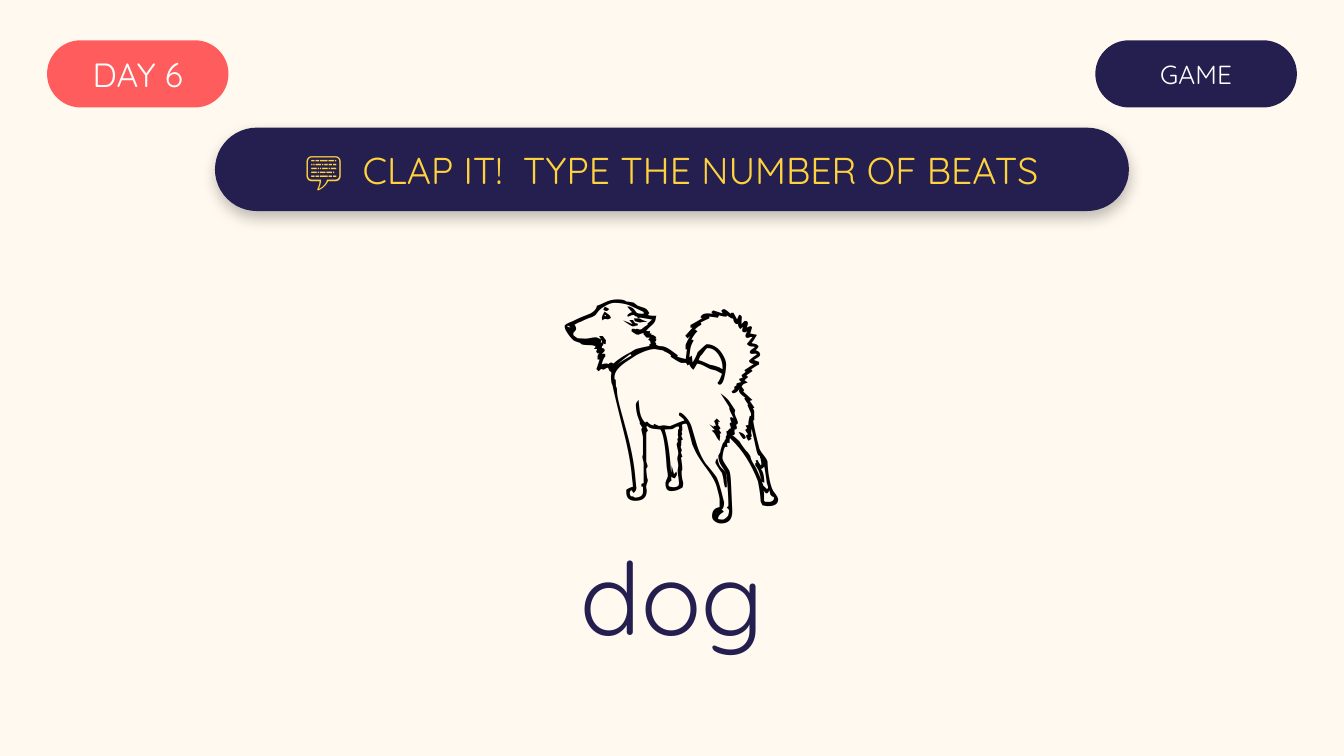
import pptx
import pptx.util
import pptx.dml.color
import pptx.enum.shapes
import pptx.enum.text
import pptx.oxml
import pptx.oxml.ns

Inches = pptx.util.Inches

COLORS = {
    "cream": "FFF9EF",
    "coral": "FF5D5D",
    "navy": "241F4E",
    "yellow": "FFD23F",
    "white": "FFFFFF",
    "black": "000000",
}
SLIDE_WIDTH = 10
SLIDE_HEIGHT = SLIDE_WIDTH * 9 / 16
MARGIN = 0.35


def rgb(color):
    return pptx.dml.color.RGBColor.from_string(COLORS[color])


def add_text(slide, left, top, width, height, text, size, color,
             font="Quicksand", anchor="MIDDLE"):
    text_box = slide.shapes.add_textbox(
        Inches(left), Inches(top), Inches(width), Inches(height)
    )
    text_frame = text_box.text_frame
    text_frame.word_wrap = True
    text_frame.vertical_anchor = getattr(pptx.enum.text.MSO_ANCHOR, anchor)
    text_frame.text = text
    paragraph = text_frame.paragraphs[0]
    paragraph.alignment = pptx.enum.text.PP_ALIGN.CENTER
    run_font = paragraph.runs[0].font
    run_font.name = font
    run_font.size = pptx.util.Pt(size)
    run_font.color.rgb = rgb(color)
    return text_frame


def add_pill(slide, left, top, width, height, fill, text, size, color):
    shape = slide.shapes.add_shape(
        pptx.enum.shapes.MSO_SHAPE.ROUNDED_RECTANGLE,
        Inches(left), Inches(top), Inches(width), Inches(height),
    )
    shape.adjustments[0] = 0.5
    shape.shadow.inherit = False
    shape.fill.solid()
    shape.fill.fore_color.rgb = rgb(fill)
    shape.line.fill.background()
    text_frame = add_text(slide, left, top, width, height, text, size, color)
    text_frame.margin_left = text_frame.margin_right = 0
    text_frame.margin_top = text_frame.margin_bottom = 0
    return shape


def add_soft_shadow(shape):
    effects = shape._element.spPr.find(pptx.oxml.ns.qn("a:effectLst"))
    effects.append(pptx.oxml.parse_xml(
        f'<a:outerShdw {pptx.oxml.ns.nsdecls("a")} blurRad="{pptx.util.Pt(8)}" '
        f'dist="{pptx.util.Pt(3)}" dir="5400000" algn="ctr" rotWithShape="0">'
        f'<a:srgbClr val="{COLORS["black"]}"><a:alpha val="25000"/></a:srgbClr>'
        '</a:outerShdw>'
    ))


def main():
    presentation = pptx.Presentation()
    presentation.slide_width = Inches(SLIDE_WIDTH)
    presentation.slide_height = Inches(SLIDE_HEIGHT)
    slide = presentation.slides.add_slide(presentation.slide_layouts[6])
    slide.background.fill.solid()
    slide.background.fill.fore_color.rgb = rgb("cream")

    add_pill(slide, MARGIN, 0.3, 1.35, 0.5, "coral", "DAY 6", 18, "white")
    game_width = 1.5
    add_pill(slide, SLIDE_WIDTH - MARGIN - game_width, 0.3, game_width, 0.5,
             "navy", "GAME", 14, "white")
    banner_width = 6.8
    banner = add_pill(slide, (SLIDE_WIDTH - banner_width) / 2, 0.95, banner_width, 0.62,
                      "navy", "💬  CLAP IT!  TYPE THE NUMBER OF BEATS", 20, "yellow")
    add_soft_shadow(banner)

    add_text(slide, 0, 1.7, SLIDE_WIDTH, 2, "🐕", 130, "black",
             font="Calibri", anchor="TOP")
    add_text(slide, 0, 4, SLIDE_WIDTH, 0.85, "dog", 54, "navy")

    presentation.save("out.pptx")


if __name__ == "__main__":
    main()
